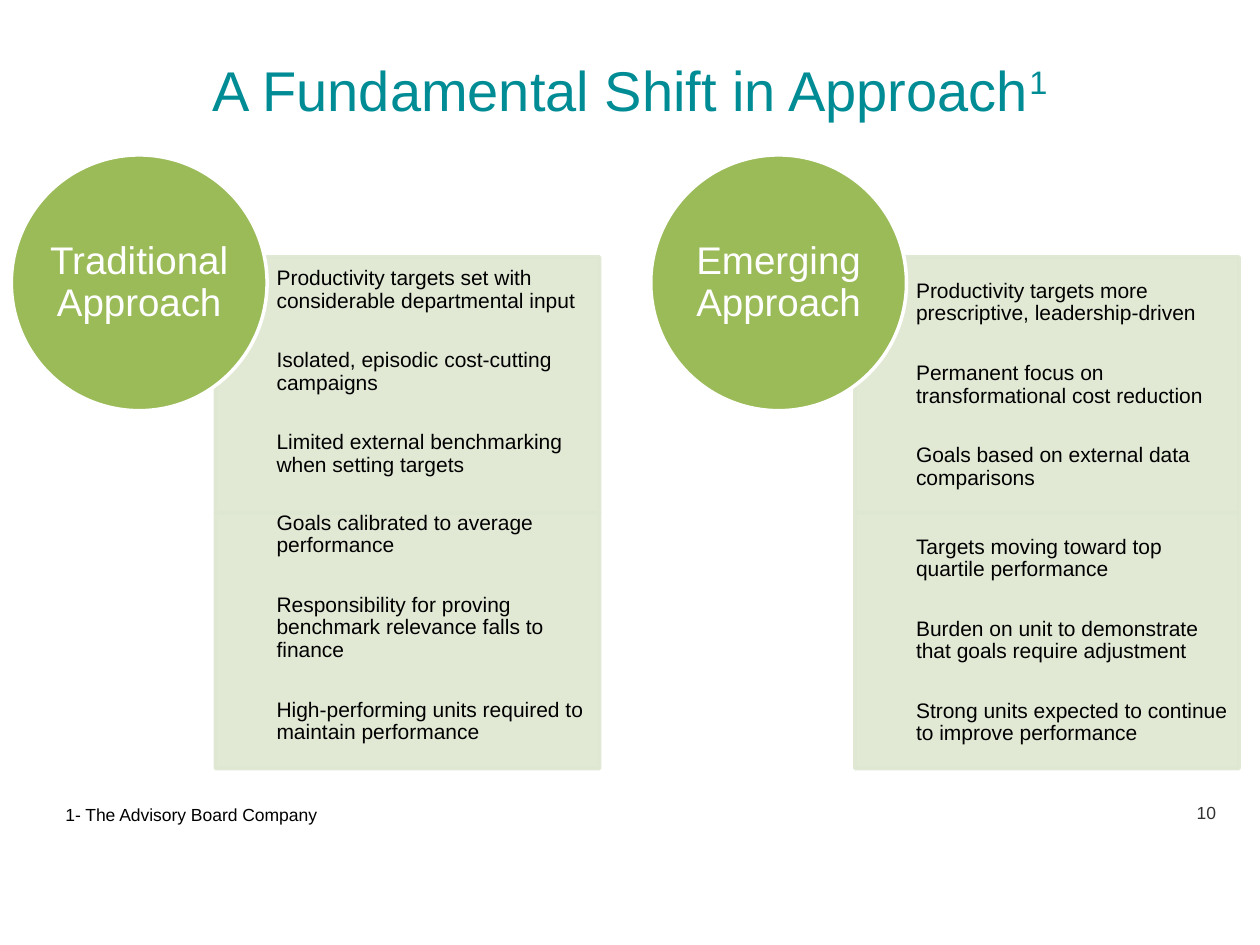
from typing import NamedTuple

from lxml.etree import SubElement
from pptx import Presentation
from pptx.dml.color import RGBColor
from pptx.enum.shapes import MSO_SHAPE as Shape
from pptx.enum.text import MSO_ANCHOR as Anchor, PP_ALIGN as Align
from pptx.oxml.ns import qn
from pptx.util import Inches, Pt

TEAL = RGBColor(0x00, 0x8C, 0x95)
GREEN = RGBColor(0x9B, 0xBB, 0x59)
PALE_GREEN = RGBColor(0xDE, 0xE7, 0xD1)
WHITE = RGBColor(0xFF, 0xFF, 0xFF)
BLACK = RGBColor(0x00, 0x00, 0x00)
GRAY = RGBColor(0x33, 0x33, 0x33)

FONT = "Arial"
SLIDE_WIDTH, SLIDE_HEIGHT = Inches(10), Inches(7.5)
COLUMNS, ROWS = 100, 75
CELL = SLIDE_WIDTH // COLUMNS
CIRCLE_SIZE = 20.3
PANEL_LEFT, PANEL_TOP = 16.2, 8.1
TEXT_INDENT = 4.85

APPROACHES = [
    ("Traditional Approach", 1, [
        ["Productivity targets set with considerable departmental input",
         "Isolated, episodic cost-cutting campaigns",
         "Limited external benchmarking when setting targets"],
        ["Goals calibrated to average performance",
         "Responsibility for proving benchmark relevance falls to finance",
         "High-performing units required to maintain performance"],
    ]),
    ("Emerging Approach", 0, [
        ["Productivity targets more prescriptive, leadership-driven",
         "Permanent focus on transformational cost reduction",
         "Goals based on external data comparisons"],
        ["Targets moving toward top quartile performance",
         "Burden on unit to demonstrate that goals require adjustment",
         "Strong units expected to continue to improve performance"],
    ]),
]


class Box(NamedTuple):
    """A region of the slide in grid columns and rows."""
    left: float
    top: float
    width: float
    height: float

    def inner(self, left, top, width, height):
        """Return a box placed relative to this one."""
        return Box(self.left + left, self.top + top, width, height)

    def lengths(self):
        """Return the box as slide lengths."""
        return [round(value * CELL) for value in self]


def style_paragraph(para, size, color, align=Align.LEFT):
    """Format a paragraph and all of its runs."""
    para.alignment = align
    for span in para.runs:
        span.font.name = FONT
        span.font.size = Pt(size)
        span.font.color.rgb = color


def set_margins(frame, left, top, right, bottom):
    """Set the four text margins in grid cells."""
    frame.margin_left, frame.margin_top = round(left * CELL), round(top * CELL)
    frame.margin_right, frame.margin_bottom = round(right * CELL), round(bottom * CELL)


def make_translucent(properties, percent):
    """Give the solid colours of a shape an opacity."""
    for color in properties.iter(qn("a:srgbClr")):
        SubElement(color, qn("a:alpha"), val=str(percent * 1000))


def add_outlined_shape(page, kind, box, fill, line):
    """Add a flat filled shape with a two-point outline."""
    shape = page.shapes.add_shape(kind, *box.lengths())
    shape.shadow.inherit = False
    shape.fill.solid()
    shape.fill.fore_color.rgb = fill
    shape.line.color.rgb = line
    shape.line.width = Pt(2)
    shape.text_frame.word_wrap = True
    shape.text_frame.vertical_anchor = Anchor.MIDDLE
    return shape


def add_label(page, box, text, size, color, align=Align.LEFT, anchor=Anchor.TOP):
    """Add a one-paragraph text box and return its paragraph."""
    frame = page.shapes.add_textbox(*box.lengths()).text_frame
    frame.word_wrap = True
    frame.vertical_anchor = anchor
    para = frame.paragraphs[0]
    para.text = text
    style_paragraph(para, size, color, align)
    return para


def add_title(page, box):
    """Add the slide title with its superscript footnote mark."""
    para = add_label(page, box, "A Fundamental Shift in Approach", 32, TEAL,
                     Align.CENTER, Anchor.MIDDLE)
    mark = para.add_run()
    mark.text = "1"
    style_paragraph(para, 32, TEAL, Align.CENTER)
    mark.font._element.set("baseline", "30000")


def add_panel(page, box, points, lift):
    """Add a pale panel with its points, raised by the lift."""
    panel = add_outlined_shape(page, Shape.RECTANGLE, box, PALE_GREEN, PALE_GREEN)
    make_translucent(panel._element.spPr, 90)
    frame = panel.text_frame
    set_margins(frame, TEXT_INDENT, 1 - lift, 0.9, 1 + lift)
    frame.text = "\n".join(points)
    for index, para in enumerate(frame.paragraphs):
        style_paragraph(para, 12, BLACK)
        para.line_spacing = 0.9
        para.space_before = Pt(21 if index else 0)


def add_approach(page, box, name, lift, panels):
    """Add stacked panels headed by an overlapping circle."""
    height = (box.height - PANEL_TOP) / len(panels)
    for index, points in enumerate(panels):
        place = box.inner(PANEL_LEFT, PANEL_TOP + index * height,
                          box.width - PANEL_LEFT, height)
        add_panel(page, place, points, lift)
    circle = add_outlined_shape(page, Shape.OVAL,
                                box.inner(0, 0, CIRCLE_SIZE, CIRCLE_SIZE), GREEN, WHITE)
    frame = circle.text_frame
    set_margins(frame, 0, 0, 0, 0)
    frame.text = name
    style_paragraph(frame.paragraphs[0], 22, WHITE, Align.CENTER)
    frame.paragraphs[0].line_spacing = 0.9


def add_footer(page, box):
    """Add the source note and the page number."""
    add_label(page, box.inner(0, 0.1, 42.5, 2.7), "1- The Advisory Board Company", 10, BLACK)
    add_label(page, box.inner(box.width - 11.7, 0, 11.7, 2.3), "10", 10, GRAY, Align.RIGHT)


def main():
    """Build and save the slide."""
    deck = Presentation()
    deck.slide_width, deck.slide_height = SLIDE_WIDTH, SLIDE_HEIGHT
    page = deck.slides.add_slide(deck.slide_layouts[6])
    add_title(page, Box(5, 3.3, COLUMNS - 10, 7.5))
    for index, (name, lift, panels) in enumerate(APPROACHES):
        box = Box(0.9 + index * 50.75, 12.3, 46.7, 48.7)
        add_approach(page, box, name, lift, panels)
    add_footer(page, Box(4.2, ROWS - 11.8, 93.3, 2.8))
    deck.save("out.pptx")


if __name__ == "__main__":
    main()
